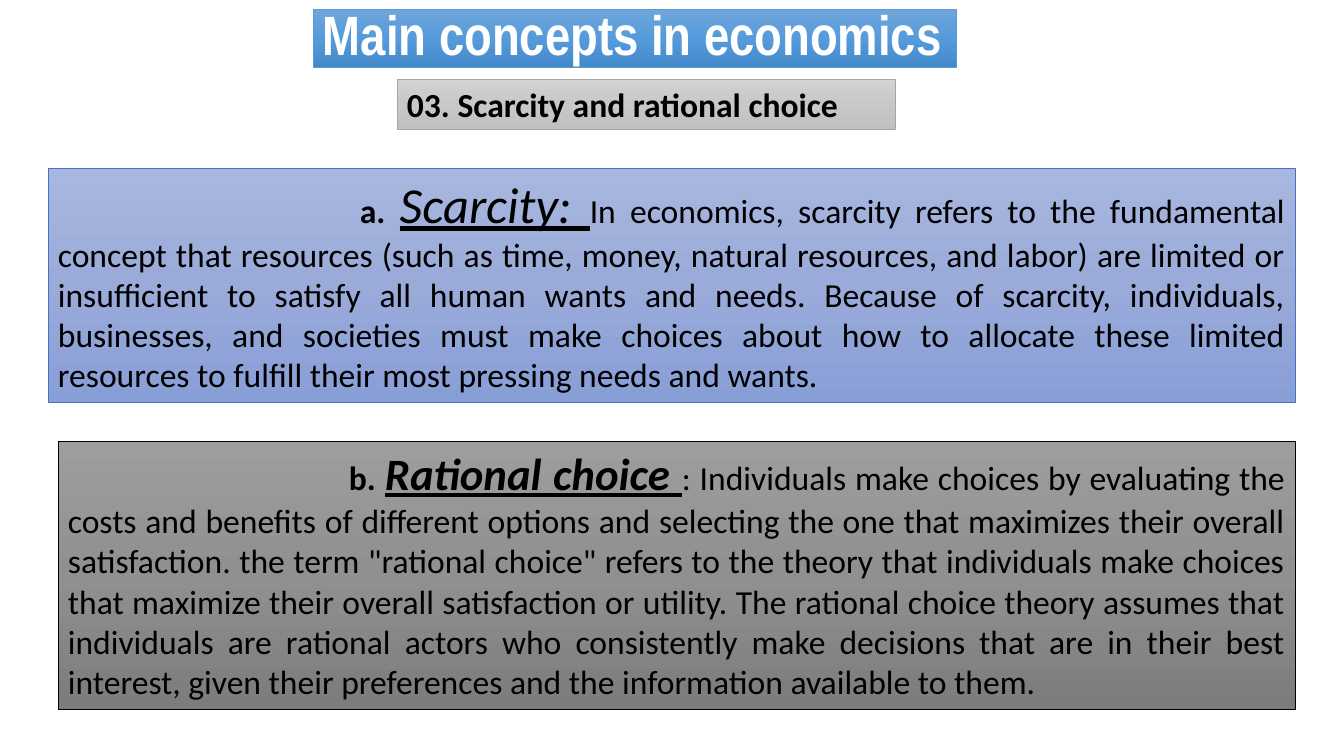
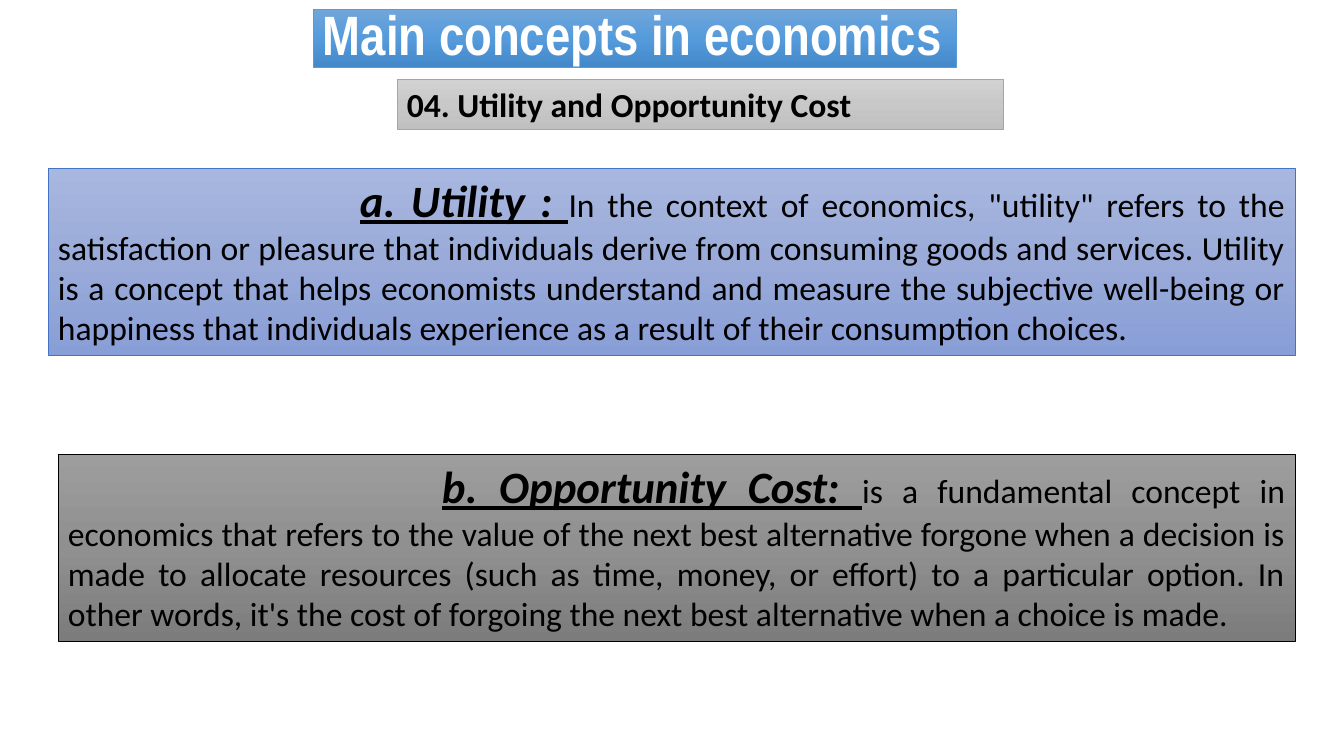
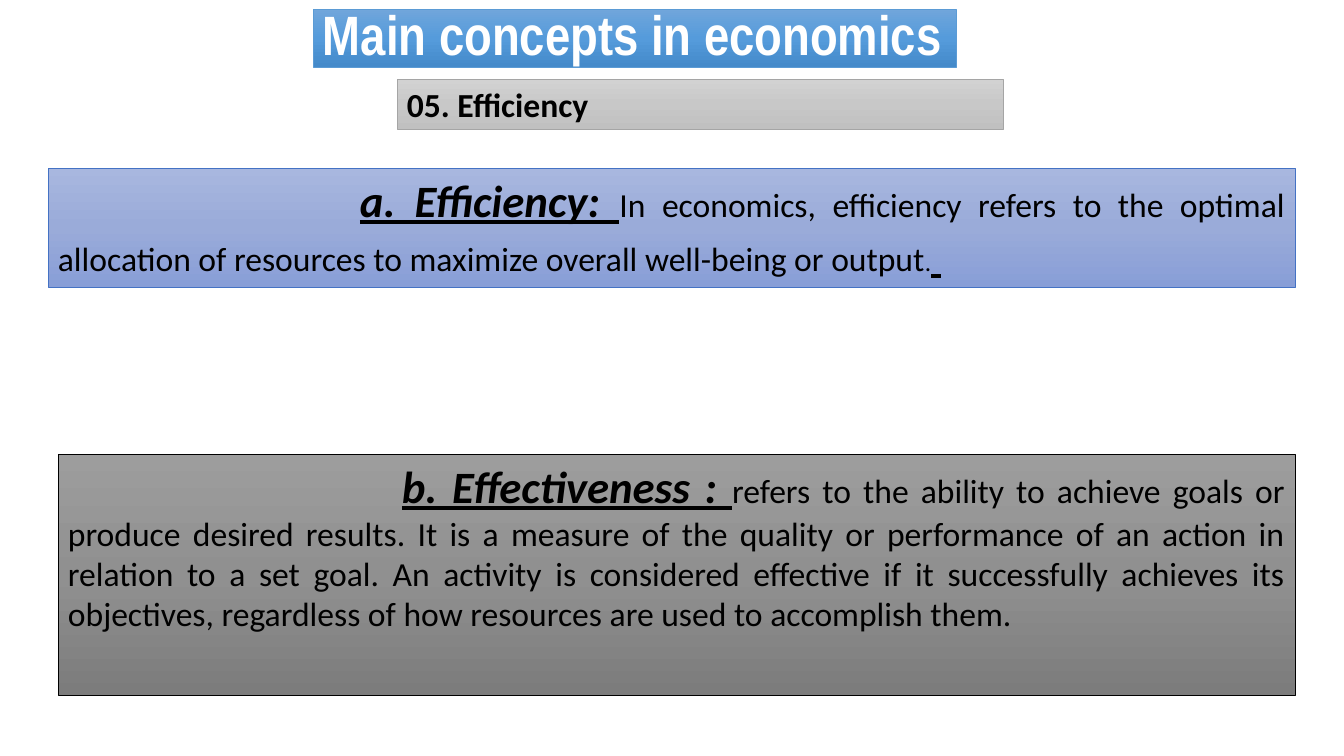
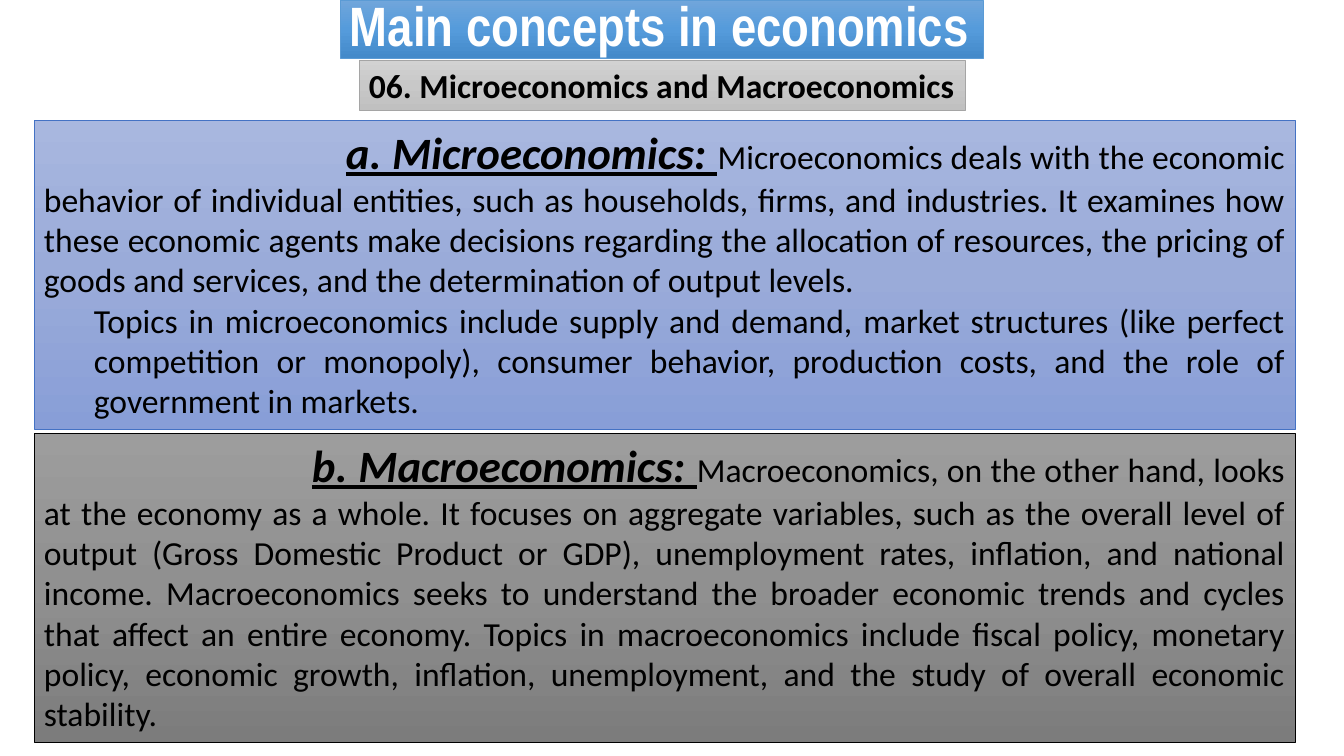
from copy import deepcopy
from dataclasses import dataclass

from pptx import Presentation
from pptx.dml.color import RGBColor
from pptx.enum.shapes import MSO_SHAPE
from pptx.enum.text import MSO_ANCHOR, PP_ALIGN
from pptx.oxml.ns import qn
from pptx.shapes.autoshape import Shape
from pptx.slide import Slide
from pptx.util import Emu, Pt

SCALE = 12192000 / 1344


def px(count: int) -> Emu:
    return Emu(round(count * SCALE))


@dataclass(frozen=True)
class Paint:
    stops: tuple[str, str, str]
    line: str


@dataclass(frozen=True)
class Theme:
    title: Paint = Paint(("71A6DB", "559BDB", "448ACA"), "5B9BD5")
    topic: Paint = Paint(("D2D2D2", "C8C8C8", "C0C0C0"), "A5A5A5")
    blue: Paint = Paint(("A8B7DF", "9AABD9", "889ED7"), "4472C4")
    dark: Paint = Paint(("9D9D9D", "909090", "7C7C7C"), "000000")
    ink: str = "000000"
    white: str = "FFFFFF"
    font: str = "Calibri"
    narrow: str = "Arial Narrow"
    head: float = 39.6
    large: float = 36
    term: float = 32
    body: float = 24
    small: float = 18
    edge: float = 0.5


THEME = Theme()


@dataclass(frozen=True)
class Run:
    text: str
    size: float = THEME.body
    bold: bool = False
    slant: bool = False
    under: bool = False


@dataclass(frozen=True)
class Para:
    runs: tuple[Run, ...]
    first: int = 0
    left: int = 0


@dataclass(frozen=True)
class Card:
    left: int
    top: int
    high: int
    paras: tuple[Para, ...]


@dataclass(frozen=True)
class Page:
    topic: str
    blue: Card
    dark: Card
    title_at: tuple[int, int] = (313, 9)
    topic_at: tuple[int, int] = (397, 79)
    topic_wide: int = 606


TITLE = "Main concepts in economics"
TITLE_WIDE, TITLE_HIGH = 643, 58
TOPIC_HIGH = 50
RIGHT = 1295


def term(text: str) -> Run:
    return Run(text, THEME.term, True, True, True)


PAGES = (
    Page(
        "03. Scarcity and rational choice",
        Card(48, 168, 234, (Para((
            Run("a. ", bold=True),
            Run("Scarcity: ", THEME.large, slant=True, under=True),
            Run("In economics, scarcity refers to the fundamental concept that resources "
                "(such as time, money, natural resources, and labor) are limited or "
                "insufficient to satisfy all human wants and needs. Because of scarcity, "
                "individuals, businesses, and societies must make choices about how to "
                "allocate these limited resources to fulfill their most pressing needs "
                "and wants."),
        ), 302),)),
        Card(58, 441, 268, (Para((
            Run("b. ", bold=True),
            term("Rational choice "),
            Run(": Individuals make choices by evaluating the costs and benefits of "
                "different options and selecting the one that maximizes their overall "
                "satisfaction. the term \"rational choice\" refers to the theory that "
                "individuals make choices that maximize their overall satisfaction or "
                "utility. The rational choice theory assumes that individuals are rational "
                "actors who consistently make decisions that are in their best interest, "
                "given their preferences and the information available to them."),
        ), 281),)),
        topic_wide=498,
    ),
    Page(
        "04. Utility and Opportunity Cost",
        Card(48, 168, 187, (Para((
            term("a. Utility : "),
            Run("In the context of economics, \"utility\" refers to the satisfaction or "
                "pleasure that individuals derive from consuming goods and services. "
                "Utility is a concept that helps economists understand and measure the "
                "subjective well-being or happiness that individuals experience as a "
                "result of their consumption choices."),
        ), 302),)),
        Card(58, 454, 187, (Para((
            term("b. Opportunity Cost: "),
            Run("is a fundamental concept in economics that refers to the value of the "
                "next best alternative forgone when a decision is made to allocate "
                "resources (such as time, money, or effort) to a particular option. In "
                "other words, it's the cost of forgoing the next best alternative when a "
                "choice is made."),
        ), 374),)),
    ),
    Page(
        "05. Efficiency",
        Card(48, 168, 119, (Para((
            term("a. Efficiency: "),
            Run("In economics, efficiency refers to the optimal allocation of resources "
                "to maximize overall well-being or output"),
            Run(".", THEME.small),
            term(" "),
        ), 302),)),
        Card(58, 454, 241, (Para((
            term("b. Effectiveness : "),
            Run("refers to the ability to achieve goals or produce desired results. It is "
                "a measure of the quality or performance of an action in relation to a "
                "set goal. An activity is considered effective if it successfully "
                "achieves its objectives, regardless of how resources are used to "
                "accomplish them."),
        ), 334),)),
    ),
    Page(
        "06. Microeconomics and Macroeconomics",
        Card(34, 120, 309, (
            Para((
                term("a. Microeconomics: "),
                Run("Microeconomics deals with the economic behavior of individual "
                    "entities, such as households, firms, and industries. It examines how "
                    "these economic agents make decisions regarding the allocation of "
                    "resources, the pricing of goods and services, and the determination "
                    "of output levels."),
            ), 302),
            Para((
                Run("Topics in microeconomics include supply and demand, market structures "
                    "(like perfect competition or monopoly), consumer behavior, production "
                    "costs, and the role of government in markets."),
            ), left=50),
        )),
        Card(34, 433, 309, (Para((
            term("b. Macroeconomics: "),
            Run("Macroeconomics, on the other hand, looks at the economy as a whole. It "
                "focuses on aggregate variables, such as the overall level of output "
                "(Gross Domestic Product or GDP), unemployment rates, inflation, and "
                "national income. Macroeconomics seeks to understand the broader economic "
                "trends and cycles that affect an entire economy. Topics in macroeconomics "
                "include fiscal policy, monetary policy, economic growth, inflation, "
                "unemployment, and the study of overall economic stability."),
        ), 268),)),
        title_at=(340, 0),
        topic_at=(359, 60),
    ),
)


def write(para, text: str, *, size: float = THEME.body, bold: bool = False,
          slant: bool = False, under: bool = False, font: str = THEME.font,
          ink: str = THEME.ink) -> None:
    run = para.add_run()
    run.text = text
    face = run.font
    face.name, face.size = font, Pt(size)
    face.bold, face.italic, face.underline = bold, slant, under
    face.color.rgb = RGBColor.from_string(ink)


def box(slide: Slide, paint: Paint, left: int, top: int, wide: int, high: int) -> Shape:
    shape = slide.shapes.add_shape(
        MSO_SHAPE.RECTANGLE, px(left), px(top), px(wide), px(high))
    shape.shadow.inherit = False
    shape.fill.gradient()
    shape.fill.gradient_angle = 270
    stops = next(shape._element.spPr.iter(qn("a:gsLst")))
    stops.insert(1, deepcopy(stops[0]))
    for stop, color, place in zip(shape.fill.gradient_stops, paint.stops, (0, 0.5, 1)):
        stop.color.rgb = RGBColor.from_string(color)
        stop.position = place
    shape.line.color.rgb = RGBColor.from_string(paint.line)
    shape.line.width = Pt(THEME.edge)
    frame = shape.text_frame
    frame.word_wrap = True
    frame.vertical_anchor = MSO_ANCHOR.TOP
    frame.paragraphs[0].alignment = PP_ALIGN.LEFT
    return shape


def draw_card(slide: Slide, card: Card, paint: Paint) -> None:
    shape = box(slide, paint, card.left, card.top, RIGHT - card.left, card.high)
    frame = shape.text_frame
    for spot, item in enumerate(card.paras):
        para = frame.add_paragraph() if spot else frame.paragraphs[0]
        para.alignment = PP_ALIGN.JUSTIFY
        props = para._p.get_or_add_pPr()
        props.set("marL", str(px(item.left)))
        props.set("indent", str(px(item.first)))
        for run in item.runs:
            write(para, run.text, size=run.size, bold=run.bold,
                  slant=run.slant, under=run.under)


def draw_page(slide: Slide, page: Page) -> None:
    title = box(slide, THEME.title, *page.title_at, TITLE_WIDE, TITLE_HIGH).text_frame
    title.vertical_anchor = MSO_ANCHOR.MIDDLE
    title.paragraphs[0].line_spacing = 0.9
    write(title.paragraphs[0], TITLE, size=THEME.head, bold=True,
          font=THEME.narrow, ink=THEME.white)
    topic = box(slide, THEME.topic, *page.topic_at, page.topic_wide, TOPIC_HIGH)
    write(topic.text_frame.paragraphs[0], page.topic, bold=True)
    draw_card(slide, page.blue, THEME.blue)
    draw_card(slide, page.dark, THEME.dark)


def main() -> None:
    deck = Presentation()
    deck.slide_width, deck.slide_height = px(1344), px(756)
    for page in PAGES:
        draw_page(deck.slides.add_slide(deck.slide_layouts[6]), page)
    deck.save("out.pptx")


if __name__ == "__main__":
    main()
